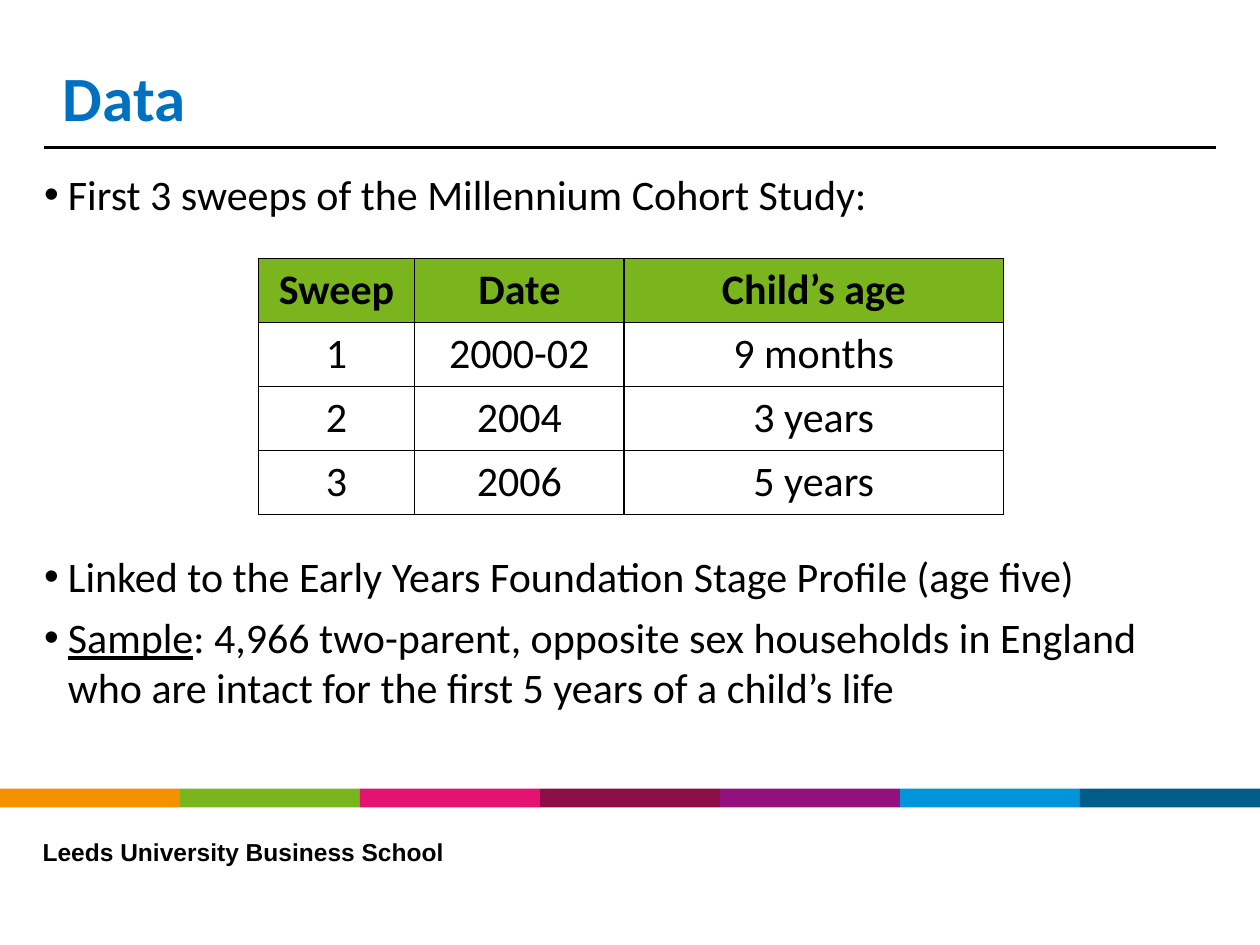
from dataclasses import dataclass

from lxml.etree import SubElement
from pptx import Presentation
from pptx.dml.color import RGBColor
from pptx.enum.shapes import MSO_CONNECTOR, MSO_SHAPE
from pptx.enum.text import MSO_ANCHOR as Anchor, PP_ALIGN as Align
from pptx.oxml.ns import qn
from pptx.util import Cm, Pt

COLORS = {
    "black": "000000", "title": "0070C0", "orange": "F39100", "green": "7AB51D",
    "pink": "E41270", "maroon": "8E0E46", "purple": "93117E", "sky": "0095D8",
    "navy": "005C88",
}
STRIPE = ("orange", "green", "pink", "maroon", "purple", "sky", "navy")
SLIDE_W, SLIDE_H = 25.4, 19.05
MARGIN = 0.89
CONTENT_W = SLIDE_W - 2 * MARGIN
BULLET_INDENT = 0.48


@dataclass
class Box:
    left: float
    top: float
    width: float
    height: float

    def lengths(self) -> list:
        return [Cm(v) for v in (self.left, self.top, self.width, self.height)]


@dataclass
class Bullet:
    text: str
    lead: str = ""  # underlined opening word


def rgb(name: str) -> RGBColor:
    return RGBColor.from_string(COLORS[name])


def write(paragraph, text: str, *, size=24, font="Calibri", color="black",
          bold=False, underline=False, align=None, spacing=None) -> None:
    if align is not None:
        paragraph.alignment = align
    if spacing is not None:
        paragraph.line_spacing = spacing
    run = paragraph.add_run()
    run.text = text
    run.font.size, run.font.name = Pt(size), font
    run.font.bold, run.font.underline = bold, underline
    run.font.color.rgb = rgb(color)


def add_frame(slide, box: Box, anchor=Anchor.TOP):
    frame = slide.shapes.add_textbox(*box.lengths()).text_frame
    frame.word_wrap = True
    frame.vertical_anchor = anchor
    frame.margin_left = frame.margin_right = frame.margin_top = frame.margin_bottom = 0
    return frame


def add_bullets(slide, box: Box, bullets: list[Bullet]) -> None:
    frame = add_frame(slide, box)
    for i, bullet in enumerate(bullets):
        paragraph = frame.add_paragraph() if i else frame.paragraphs[0]
        paragraph.space_after = Pt(6)
        props = paragraph._p.get_or_add_pPr()
        props.set("marL", str(Cm(BULLET_INDENT)))
        props.set("indent", str(-Cm(BULLET_INDENT)))
        SubElement(props, qn("a:buFont"), typeface="Arial")
        SubElement(props, qn("a:buChar"), char="•")
        if bullet.lead:
            write(paragraph, bullet.lead, underline=True)
        write(paragraph, bullet.text)


def add_rule(slide, top: float) -> None:
    rule = slide.shapes.add_connector(
        MSO_CONNECTOR.STRAIGHT, Cm(MARGIN), Cm(top), Cm(SLIDE_W - MARGIN), Cm(top))
    rule.line.color.rgb = rgb("black")
    rule.line.width = Pt(1.5)
    SubElement(rule._element.spPr, qn("a:effectLst"))


def add_stripe(slide, top: float, height: float) -> None:
    width = SLIDE_W / len(STRIPE)
    for i, color in enumerate(STRIPE):
        band = slide.shapes.add_shape(
            MSO_SHAPE.RECTANGLE, *Box(i * width, top, width, height).lengths())
        band.shadow.inherit = False
        band.fill.solid()
        band.fill.fore_color.rgb = rgb(color)
        band.line.fill.background()


def border_cell(cell) -> None:
    props = cell._tc.get_or_add_tcPr()
    for i, side in enumerate(("lnL", "lnR", "lnT", "lnB")):
        edge = props.makeelement(qn(f"a:{side}"), {"w": str(Pt(1))})
        fill = SubElement(edge, qn("a:solidFill"))
        SubElement(fill, qn("a:srgbClr"), val=COLORS["black"])
        props.insert(i, edge)  # borders come before the fill


def add_sweeps(slide, box: Box, widths: list[float], rows: list[tuple]) -> None:
    table = slide.shapes.add_table(len(rows), len(widths), *box.lengths()).table
    for column, width in zip(table.columns, widths):
        column.width = Cm(width)
    for r, row in enumerate(rows):
        header = r == 0
        for c, text in enumerate(row):
            cell = table.cell(r, c)
            if header:
                cell.fill.solid()
                cell.fill.fore_color.rgb = rgb("green")
            else:
                cell.fill.background()
            border_cell(cell)
            write(cell.text_frame.paragraphs[0], text, bold=header, align=Align.CENTER)


def main() -> None:
    prs = Presentation()
    prs.slide_width, prs.slide_height = Cm(SLIDE_W), Cm(SLIDE_H)
    slide = prs.slides.add_slide(prs.slide_layouts[6])

    # Rule, footer and coloured stripe
    add_rule(slide, 2.97)
    footer = add_frame(slide, Box(0.86, 16.99, 9.42, 0.48))
    write(footer.paragraphs[0], "Leeds University Business School",
          size=14, font="Arial", bold=True, spacing=0.8)
    add_stripe(slide, 15.9, 0.38)

    # Title
    title = add_frame(slide, Box(1.27, 0.76, 22.86, 1.96), Anchor.BOTTOM)
    write(title.paragraphs[0], "Data", size=36, color="title", bold=True, spacing=0.9)

    # Bullets above and below the table
    add_bullets(slide, Box(MARGIN, 3.4, CONTENT_W, 1.1),
                [Bullet("First 3 sweeps of the Millennium Cohort Study:")])
    add_bullets(slide, Box(MARGIN, 11.1, CONTENT_W, 3.6), [
        Bullet("Linked to the Early Years Foundation Stage Profile (age five)"),
        Bullet(": 4,966 two-parent, opposite sex households in England "
               "who are intact for the first 5 years of a child’s life", lead="Sample"),
    ])

    # Sweeps table
    widths = [3.15, 4.22, 7.65]
    add_sweeps(slide, Box(5.21, 5.21, sum(widths), 5.16), widths, [
        ("Sweep", "Date", "Child’s age"),
        ("1", "2000-02", "9 months"),
        ("2", "2004", "3 years"),
        ("3", "2006", "5 years"),
    ])

    prs.save("out.pptx")


if __name__ == "__main__":
    main()
